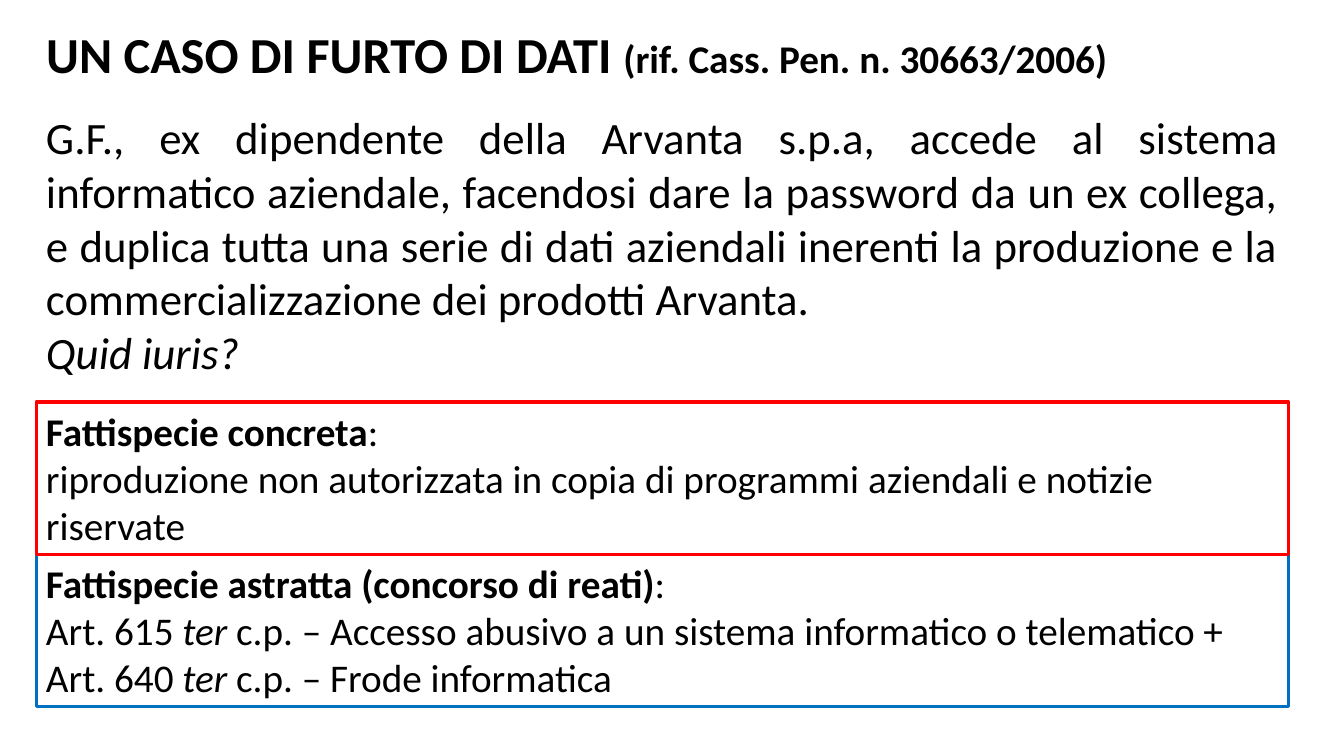
import pptx
import pptx.util
import pptx.dml.color
import pptx.enum.shapes
import pptx.enum.text

Cm = pptx.util.Cm
ALIGN = pptx.enum.text.PP_ALIGN

BLACK = pptx.dml.color.RGBColor(0x00, 0x00, 0x00)
RED = pptx.dml.color.RGBColor(0xFF, 0x00, 0x00)
BLUE = pptx.dml.color.RGBColor(0x00, 0x70, 0xC0)

LEFT, WIDTH = Cm(0.91), Cm(31.57)
CASE_TOP, CASE_HEIGHT = Cm(10.13), Cm(3.84)


def add_text(para, text, size=28, bold=False, italic=False):
    span = para.add_run()
    span.text = text
    span.font.name = "Calibri"
    span.font.size = pptx.util.Pt(size)
    span.font.bold = bold
    span.font.italic = italic
    span.font.color.rgb = BLACK


def fill_frame(frame, paragraphs, align=ALIGN.LEFT):
    """Write paragraphs, each a list of (text, format) pairs, from the top of the frame."""
    frame.word_wrap = True
    frame.auto_size = pptx.enum.text.MSO_AUTO_SIZE.SHAPE_TO_FIT_TEXT
    frame.vertical_anchor = pptx.enum.text.MSO_ANCHOR.TOP
    for index, spans in enumerate(paragraphs):
        para = frame.paragraphs[0] if index == 0 else frame.add_paragraph()
        para.alignment = align
        for text, text_format in spans:
            add_text(para, text, **text_format)


def place_title(page, left, top, width, height):
    title = page.shapes.title
    title.left, title.top, title.width, title.height = left, top, width, height
    fill_frame(title.text_frame, [[
        ("UN CASO DI FURTO DI DATI ", dict(size=36, bold=True)),
        ("(rif. Cass. Pen. n. 30663/2006)", dict(bold=True)),
    ]])


def add_story(page, left, top, width, height):
    box = page.shapes.add_textbox(left, top, width, height)
    story = (
        "G.F., ex dipendente della Arvanta s.p.a, accede al sistema informatico "
        "aziendale, facendosi dare la password da un ex collega, e duplica tutta "
        "una serie di dati aziendali inerenti la produzione e la "
        "commercializzazione dei prodotti Arvanta."
    )
    fill_frame(box.text_frame, [
        [(story, dict(size=32))],
        [("Quid iuris?", dict(size=32, italic=True))],
    ], ALIGN.JUSTIFY)


def add_case(page, left, top, width, height, color, heading, lines):
    """Add an outlined box with a bold heading above its lines."""
    box = page.shapes.add_shape(
        pptx.enum.shapes.MSO_SHAPE.RECTANGLE, left, top, width, height)
    box.shadow.inherit = False
    box.fill.background()
    box.line.color.rgb = color
    box.line.width = pptx.util.Pt(2.25)
    fill_frame(box.text_frame, [[(heading, dict(bold=True)), (":", {})]] + lines)


def article(number, offence):
    return [(f"Art. {number} ", {}), ("ter", dict(italic=True)),
            (f" c.p. – {offence}", {})]


def main():
    deck = pptx.Presentation()
    deck.slide_width, deck.slide_height = Cm(33.87), Cm(19.05)
    page = deck.slides.add_slide(deck.slide_layouts.get_by_name("Title Only"))

    place_title(page, LEFT, Cm(0.46), WIDTH, Cm(1.8))
    add_story(page, LEFT, Cm(2.64), WIDTH, Cm(7.09))
    add_case(page, LEFT, CASE_TOP + CASE_HEIGHT, WIDTH, CASE_HEIGHT, BLUE,
             "Fattispecie astratta (concorso di reati)", [
                 article(615, "Accesso abusivo a un sistema informatico o telematico +"),
                 article(640, "Frode informatica"),
             ])
    add_case(page, LEFT, CASE_TOP, WIDTH, CASE_HEIGHT, RED,
             "Fattispecie concreta", [[
                 ("riproduzione non autorizzata in copia di programmi aziendali "
                  "e notizie riservate", {}),
             ]])
    deck.save("out.pptx")


if __name__ == "__main__":
    main()
